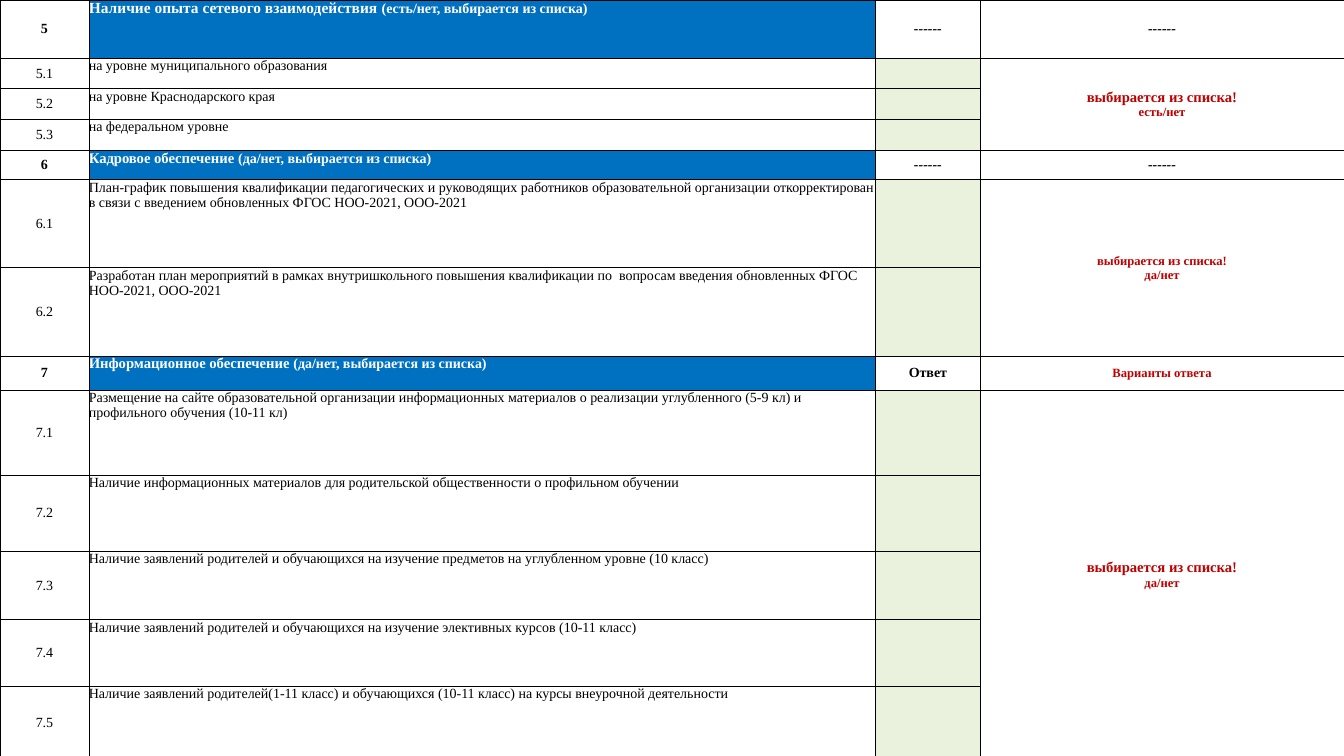
from pptx import Presentation
from pptx.dml.color import RGBColor
from pptx.enum.text import MSO_ANCHOR as Anchor, PP_ALIGN as Align
from pptx.oxml import parse_xml
from pptx.util import Cm, Pt

BLACK = RGBColor(0x00, 0x00, 0x00)
WHITE = RGBColor(0xFF, 0xFF, 0xFF)
BLUE = RGBColor(0x00, 0x70, 0xC0)
GREEN = RGBColor(0xEA, 0xF1, 0xDD)
RED = RGBColor(0xC0, 0x00, 0x00)
NAMESPACE = "http://schemas.openxmlformats.org/drawingml/2006/main"

COLUMN_WIDTHS = [2.24, 19.83, 2.63, 9.17]
DASHES = "------"
PICK = "выбирается из списка!"

SECTIONS = [
    {
        "number": "5", "height": 1.46,
        "title": "Наличие опыта сетевого взаимодействия ", "title_size": 11,
        "note": "(есть/нет, выбирается из списка)",
        "answer": DASHES, "options": DASHES, "options_size": 10,
        "options_color": BLACK, "italic": True,
        "choice": "есть/нет", "pick_size": 10.5,
        "items": [
            (0.74, "на уровне муниципального образования"),
            (0.74, "на уровне Краснодарского края"),
            (0.74, "на федеральном уровне"),
        ],
    },
    {
        "number": "6", "height": 0.74,
        "title": "Кадровое обеспечение ", "title_size": 10.5,
        "note": "(да/нет, выбирается из списка)",
        "answer": DASHES, "options": DASHES, "options_size": 10,
        "options_color": BLACK, "italic": True,
        "choice": "да/нет", "pick_size": 9,
        "items": [
            (2.22, "План-график повышения квалификации педагогических и руководящих работников "
                   "образовательной организации откорректирован в связи с введением обновленных "
                   "ФГОС НОО-2021, ООО-2021"),
            (2.22, "Разработан план мероприятий в рамках внутришкольного повышения квалификации "
                   "по  вопросам введения обновленных ФГОС НОО-2021, ООО-2021"),
        ],
    },
    {
        "number": "7", "height": 0.86,
        "title": "Информационное обеспечение ", "title_size": 10.5,
        "note": "(да/нет, выбирается из списка)",
        "answer": "Ответ", "options": "Варианты ответа", "options_size": 9,
        "options_color": RED, "italic": False,
        "choice": "да/нет", "pick_size": 10.5,
        "items": [
            (2.14, "Размещение на сайте образовательной организации информационных материалов "
                   "о реализации углубленного (5-9 кл) и профильного обучения (10-11 кл)"),
            (1.92, "Наличие информационных материалов для родительской общественности "
                   "о профильном обучении"),
            (1.73, "Наличие заявлений родителей и обучающихся на изучение предметов "
                   "на углубленном уровне (10 класс)"),
            (1.68, "Наличие заявлений родителей и обучающихся на изучение элективных курсов "
                   "(10-11 класс)"),
            (1.85, "Наличие заявлений родителей(1-11 класс) и обучающихся (10-11 класс) "
                   "на курсы внеурочной деятельности"),
        ],
    },
]


def write(para, text, size=10, color=BLACK, bold=False, italic=False, align=Align.CENTER):
    para.alignment = align
    span = para.add_run()
    span.text = text
    span.font.name = "Times New Roman"
    span.font.size = Pt(size)
    span.font.bold = bold
    span.font.italic = italic
    span.font.color.rgb = color


deck = Presentation()
deck.slide_width = Cm(33.87)
deck.slide_height = Cm(19.05)
slide = deck.slides.add_slide(deck.slide_layouts[6])

row_heights = []
for section in SECTIONS:
    row_heights.append(section["height"])
    row_heights.extend(height for height, text in section["items"])

table = slide.shapes.add_table(
    len(row_heights), len(COLUMN_WIDTHS), Cm(0), Cm(0), deck.slide_width, deck.slide_height
).table
table.first_row = False
table.horz_banding = False
for column, width in zip(table.columns, COLUMN_WIDTHS):
    column.width = Cm(width)
for row, height in zip(table.rows, row_heights):
    row.height = Cm(height)

for cell in table.iter_cells():
    cell.margin_left = cell.margin_right = cell.margin_top = cell.margin_bottom = 0
    cell.vertical_anchor = Anchor.MIDDLE
    properties = cell._tc.get_or_add_tcPr()
    for side in ("lnL", "lnR", "lnT", "lnB"):
        properties.append(parse_xml(
            f'<a:{side} xmlns:a="{NAMESPACE}" w="{Pt(0.5)}">'
            f'<a:solidFill><a:srgbClr val="{BLACK}"/></a:solidFill></a:{side}>'
        ))
    cell.fill.solid()
    cell.fill.fore_color.rgb = WHITE

top = 0
for section in SECTIONS:
    number, title, answer, options = [table.cell(top, column) for column in range(4)]
    write(number.text_frame.paragraphs[0], section["number"], bold=True)
    title.fill.fore_color.rgb = BLUE
    title.vertical_anchor = Anchor.TOP
    para = title.text_frame.paragraphs[0]
    write(para, section["title"], size=section["title_size"], color=WHITE, bold=True, align=Align.LEFT)
    write(para, section["note"], color=WHITE, bold=True, align=Align.LEFT)
    write(answer.text_frame.paragraphs[0], section["answer"], bold=True, italic=section["italic"])
    write(options.text_frame.paragraphs[0], section["options"], size=section["options_size"],
          color=section["options_color"], bold=True, italic=section["italic"])

    for index, (height, text) in enumerate(section["items"], start=1):
        number, description, answer = [table.cell(top + index, column) for column in range(3)]
        write(number.text_frame.paragraphs[0], f'{section["number"]}.{index}')
        description.vertical_anchor = Anchor.TOP
        write(description.text_frame.paragraphs[0], text, align=Align.LEFT)
        answer.fill.fore_color.rgb = GREEN

    last = top + len(section["items"])
    choice = table.cell(top + 1, 3)
    choice.merge(table.cell(last, 3))
    write(choice.text_frame.paragraphs[0], PICK, size=section["pick_size"], color=RED, bold=True)
    write(choice.text_frame.add_paragraph(), section["choice"], size=9, color=RED, bold=True)
    top = last + 1

deck.save("out.pptx")
